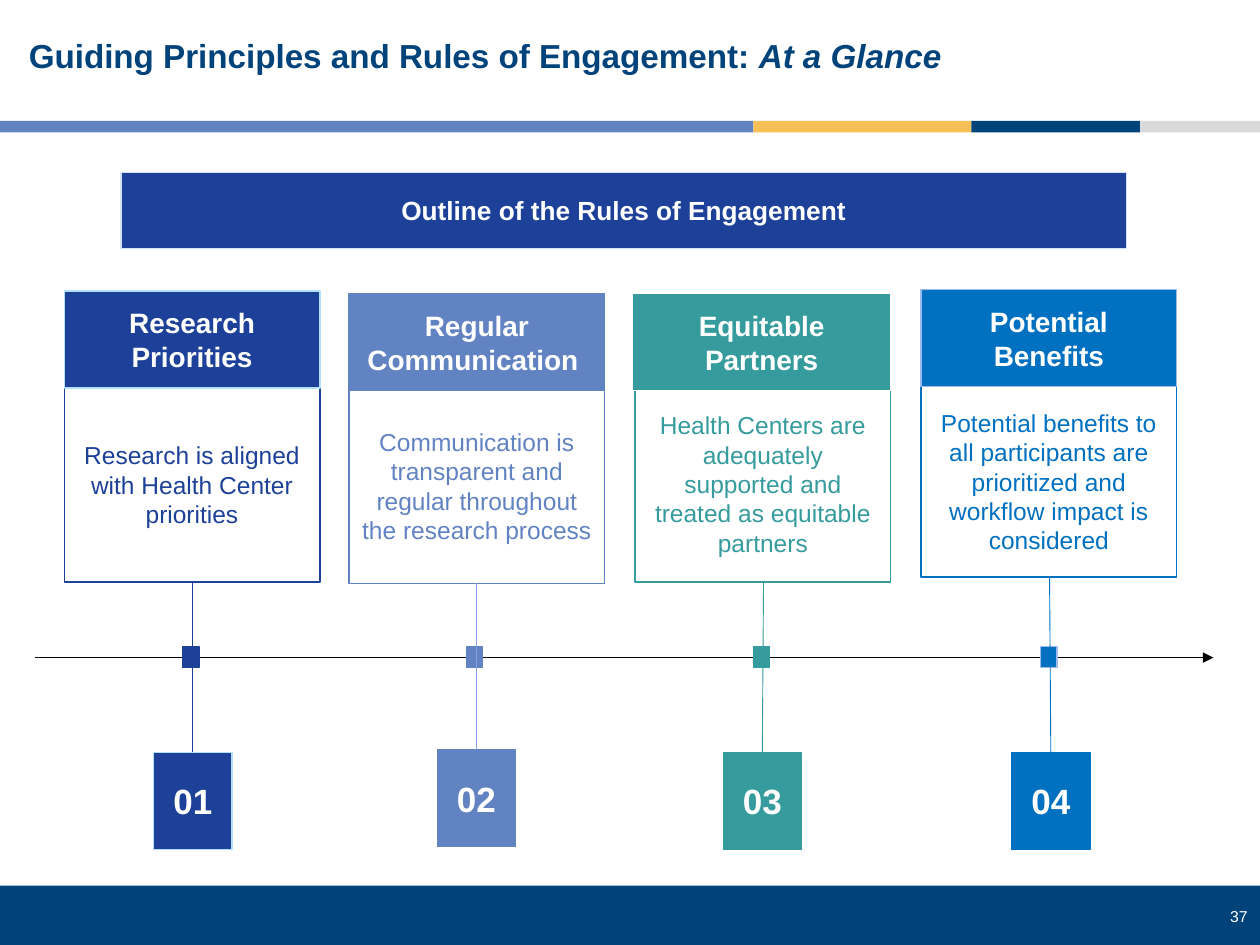
from lxml import etree
from pptx import Presentation
from pptx.dml.color import RGBColor
from pptx.enum.shapes import MSO_CONNECTOR, MSO_SHAPE
from pptx.enum.text import MSO_ANCHOR, PP_ALIGN
from pptx.oxml.ns import qn
from pptx.util import Inches, Pt

RECT = MSO_SHAPE.RECTANGLE
ROUND = MSO_SHAPE.ROUNDED_RECTANGLE
LINE = MSO_CONNECTOR.STRAIGHT
LEFT, MID, RIGHT = PP_ALIGN.LEFT, PP_ALIGN.CENTER, PP_ALIGN.RIGHT

THEME = {
    "font": "Arial",
    "navy": "00437B", "royal": "1D4099", "slate": "6283C2", "teal": "369B9D",
    "blue": "0070C0", "gold": "F8BF56", "gray": "D9D9D9", "white": "FFFFFF",
    "black": "000000", "ice": "B3E0FF", "sky": "9DBCED", "mist": "D4E2F8",
    "lilac": "839FE7",
    "title": 19, "head": 16, "body": 14, "banner": 15, "num": 20, "page": 9,
}

deck = Presentation()
deck.slide_width, deck.slide_height = Inches(10), Inches(7.5)
slide = deck.slides.add_slide(deck.slide_layouts[6])
shapes = slide.shapes


def tint(name):
    return RGBColor.from_string(THEME[name])


def block(box, fill=None, edge=None, text="", size="body", ink="white",
          bold=True, kind=ROUND):
    shape = shapes.add_shape(kind, *map(Inches, box))
    shape.shadow.inherit = False
    if kind == ROUND:
        shape.adjustments[0] = 0
    if fill:
        shape.fill.solid()
        shape.fill.fore_color.rgb = tint(fill)
    else:
        shape.fill.background()
    if edge:
        shape.line.color.rgb = tint(edge)
        shape.line.width = Pt(0.75)
    else:
        shape.line.fill.background()
    if text:
        frame = shape.text_frame
        form = {"word_wrap": True, "vertical_anchor": MSO_ANCHOR.MIDDLE}
        for side in ("left", "top", "right", "bottom"):
            form["margin_" + side] = Inches(0.1)
        for key, value in form.items():
            setattr(frame, key, value)
        para = frame.paragraphs[0]
        para.alignment = MID
        run = para.add_run()
        run.text = text
        for key, value in {"name": THEME["font"], "size": Pt(THEME[size]), "bold": bold}.items():
            setattr(run.font, key, value)
        run.font.color.rgb = tint(ink)


def link(start, end, ink, width):
    line = shapes.add_connector(LINE, *map(Inches, start + end))
    line.line.color.rgb = tint(ink)
    line.line.width = Pt(width)
    etree.SubElement(line._element.spPr, qn("a:effectLst"))
    return line


block((0, 7.03, 10, 0.47), "navy", kind=RECT)
stops = [0, 5.98, 7.71, 9.05, 10]
for left, right, fill in zip(stops, stops[1:], ("slate", "gold", "navy", "gray")):
    block((left, 0.96, right - left, 0.09), fill, kind=RECT)

labels = [
    ((0.13, 0.3, 9.59, 0.32), LEFT, MSO_ANCHOR.MIDDLE, "title", "navy", True,
     [("Guiding Principles and Rules of Engagement: ", False), ("At a Glance", True)]),
    ((9.31, 7.15, 0.69, 0.25), RIGHT, MSO_ANCHOR.TOP, "page", "white", False, [("37", False)]),
]
for box, align, anchor, size, ink, bold, runs in labels:
    frame = shapes.add_textbox(*map(Inches, box)).text_frame
    frame.word_wrap = True
    frame.vertical_anchor = anchor
    para = frame.paragraphs[0]
    para.alignment = align
    if size == "title":
        para.line_spacing = 0.9
    for text, slant in runs:
        run = para.add_run()
        run.text = text
        form = {"name": THEME["font"], "size": Pt(THEME[size]), "bold": bold, "italic": slant}
        for key, value in form.items():
            setattr(run.font, key, value)
        run.font.color.rgb = tint(ink)

block((0.96, 1.37, 7.98, 0.6), "royal", "mist", "Outline of the Rules of Engagement", "banner")

axis = link((0.28, 5.22), (9.63, 5.22), "black", 0.75)
etree.SubElement(axis.line._get_or_add_ln(), qn("a:tailEnd"), type="triangle")

cols = [
    {"ink": "royal", "edges": ("ice", "royal", "ice"), "stem": "royal",
     "head": (0.51, 2.31, 2.03), "body": (0.51, 3.07, 1.55),
     "node": 1.45, "num": (1.22, 5.97), "line": (1.53, 1.53),
     "name": "Research Priorities",
     "text": "Research is aligned with Health Center priorities"},
    {"ink": "slate", "edges": ("slate", "slate", "slate"), "stem": "lilac",
     "head": (2.77, 2.33, 2.03), "body": (2.77, 3.08, 1.55),
     "node": 3.7, "num": (3.47, 5.95), "line": (3.78, 3.78),
     "name": "Regular Communication ",
     "text": "Communication is transparent and regular throughout the research process "},
    {"ink": "teal", "edges": ("white", "teal", "teal"), "stem": "teal",
     "head": (5.02, 2.33, 2.05), "body": (5.04, 3.06, 1.56),
     "node": 5.98, "num": (5.74, 5.97), "line": (6.06, 6.05),
     "name": "Equitable Partners",
     "text": "Health Centers are adequately supported and treated as equitable partners"},
    {"ink": "blue", "edges": ("sky", "sky", "blue"), "stem": "blue",
     "head": (7.31, 2.3, 2.03), "body": (7.31, 3.06, 1.52),
     "node": 8.26, "num": (8.03, 5.97), "line": (8.33, 8.34),
     "name": "Potential Benefits",
     "text": "Potential benefits to all participants are prioritized and workflow impact is considered"},
]
for count, col in enumerate(cols, 1):
    ink = col["ink"]
    rim, dot, tag = col["edges"]
    left, top, high = col["body"]
    block((left, top, 2.03, high), None, ink, col["text"], "body", ink, False)
    block(col["head"] + (0.77,), ink, rim, col["name"], "head")
    block((col["node"], 5.13, 0.13, 0.17), ink, dot, kind=RECT)
    block(col["num"] + (0.62, 0.77), ink, tag, f"{count:02}", "num")
    start, end = col["line"]
    link((start, top + high), (end, col["num"][1]), col["stem"], 0.5)

deck.save("out.pptx")
